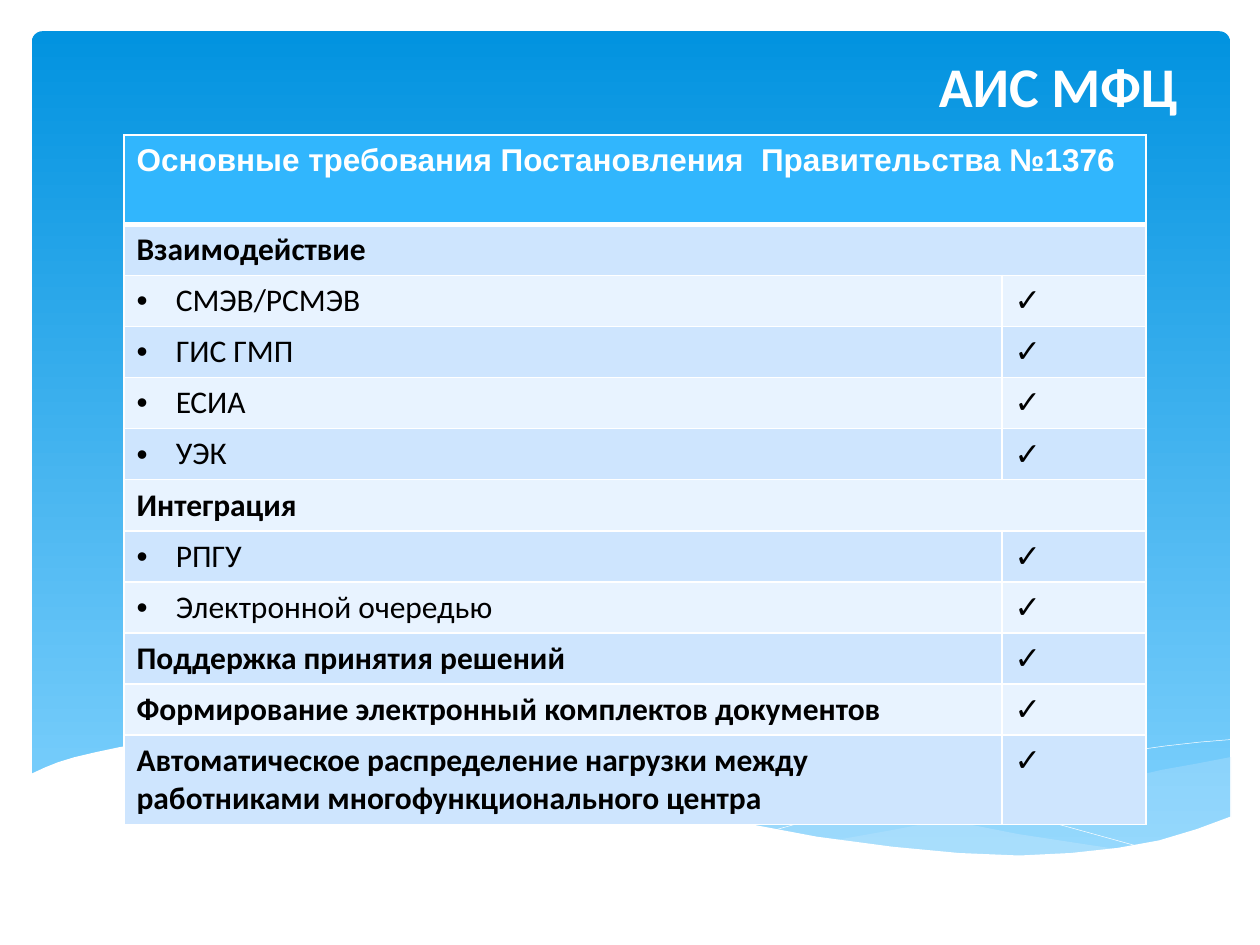
from dataclasses import dataclass

from lxml.etree import SubElement
from pptx import Presentation
from pptx.dml.color import RGBColor
from pptx.enum.shapes import MSO_SHAPE
from pptx.enum.text import PP_ALIGN
from pptx.oxml.ns import qn
from pptx.util import Cm, Pt


@dataclass(frozen=True)
class Theme:
    white: str = "FFFFFF"
    black: str = "000000"
    sky_top: str = "0293E0"
    sky_bottom: str = "83D3FE"
    wave: str = "C6E7FC"
    header: str = "31B6FD"
    bands: tuple = ("CEE5FE", "E8F3FF")
    body_font: str = "Calibri"
    header_font: str = "Arial"
    title_size: int = 32
    table_size: int = 18


THEME = Theme()
HUNDREDTH_INCH = Cm(0.0254)
DOT = "•"
CHECK = "✓"
HEADING = "Основные требования Постановления  Правительства №1376"
REQUIREMENTS = [
    ("Взаимодействие", "section"),
    ("СМЭВ/РСМЭВ", "item"),
    ("ГИС ГМП", "item"),
    ("ЕСИА", "item"),
    ("УЭК", "item"),
    ("Интеграция", "section"),
    ("РПГУ", "item"),
    ("Электронной очередью", "item"),
    ("Поддержка принятия решений", "feature"),
    ("Формирование электронный комплектов документов", "feature"),
    ("Автоматическое распределение нагрузки между работниками "
     "многофункционального центра", "feature"),
]

RIGHT_WAVE = [
    (976, 601), (950, 606), (922, 611), (892, 618), (862, 625), (806, 639),
    (754, 650), (707, 659), (662, 667), (692, 671), (719, 674), (746, 677),
    (770, 679), (804, 680), (836, 679), (864, 677), (890, 674), (914, 669),
    (937, 663), (951, 659), (977, 649), (977, 601),
]
MIDDLE_WAVE = [
    (894, 675), (867, 671), (808, 662), (742, 649), (669, 633), (630, 624),
    (584, 613), (542, 604), (502, 598), (465, 593), (420, 589), (380, 587),
    (345, 588), (314, 590), (287, 593), (323, 598), (363, 604), (405, 613),
    (450, 624), (530, 642), (602, 657), (666, 668), (723, 676), (774, 679),
    (819, 680), (859, 679), (894, 675),
]
FALLING_LINE = [
    (310, 597), (336, 593), (363, 590), (402, 589), (451, 589), (489, 592),
    (533, 596), (582, 602), (637, 610), (696, 621), (761, 635), (832, 652),
    (908, 673),
]
RISING_LINE = [
    (614, 659), (653, 648), (696, 637), (749, 625), (807, 612), (867, 600),
    (897, 596), (925, 592), (952, 589), (976, 587),
]
WHITE_WAVE = [
    (977, 648), (950, 658), (920, 667), (887, 673), (850, 677), (809, 679),
    (761, 677), (708, 672), (648, 664), (579, 651), (529, 641), (475, 629),
    (447, 622), (391, 609), (340, 599), (292, 592), (250, 588), (211, 586),
    (177, 586), (146, 587), (119, 589), (95, 593), (76, 597), (59, 601),
    (46, 605), (36, 609), (23, 615), (23, 731), (977, 731),
]


def color(value):
    return RGBColor.from_string(value)


def add_solid_fill(parent, value):
    fill = SubElement(parent, qn("a:solidFill"))
    SubElement(fill, qn("a:srgbClr"), val=value)


def add_background(slide):
    shape = slide.shapes.add_shape(
        MSO_SHAPE.ROUNDED_RECTANGLE, Cm(0.64), Cm(0.63), Cm(24.16), Cm(16.76))
    shape.adjustments[0] = 0.013
    shape.shadow.inherit = False
    shape.line.fill.background()
    shape.fill.gradient()
    shape.fill.gradient_angle = 270
    for stop, value in zip(shape.fill.gradient_stops,
                           (THEME.sky_top, THEME.sky_bottom)):
        stop.color.rgb = color(value)


def draw_outline(slide, points, close):
    builder = slide.shapes.build_freeform(*points[0], scale=HUNDREDTH_INCH)
    builder.add_line_segments(points[1:], close=close)
    shape = builder.convert_to_shape()
    shape.shadow.inherit = False
    return shape


def add_wave(slide, points, fill, opacity=100):
    shape = draw_outline(slide, points, True)
    shape.line.fill.background()
    shape.fill.solid()
    shape.fill.fore_color.rgb = color(fill)
    if opacity < 100:
        for node in shape.fill._xPr.iter(qn("a:srgbClr")):
            SubElement(node, qn("a:alpha"), val=str(opacity * 1000))


def add_curve(slide, points):
    shape = draw_outline(slide, points, False)
    shape.fill.background()
    shape.line.color.rgb = color(THEME.white)
    shape.line.width = Cm(0.01)


def style_font(font, size, value, bold, name=THEME.body_font):
    font.name = name
    font.size = Pt(size)
    font.bold = bold
    font.color.rgb = color(value)


def add_bullet(paragraph, symbol):
    properties = paragraph._p.get_or_add_pPr()
    indent = Cm(0.79)
    properties.set("marL", str(indent))
    properties.set("indent", str(-indent))
    SubElement(properties, qn("a:buFont"), typeface=THEME.header_font)
    SubElement(properties, qn("a:buChar"), char=symbol)


def style_cell(cell, fill, thick_side=None):
    properties = cell._tc.get_or_add_tcPr()
    for side in ("lnL", "lnR", "lnT", "lnB"):
        width = Pt(3 if side == thick_side else 1)
        border = SubElement(properties, qn(f"a:{side}"), w=str(width))
        add_solid_fill(border, THEME.white)
    cell.fill.solid()
    cell.fill.fore_color.rgb = color(fill)


def write_cell(cell, text, value, bold, name=THEME.body_font, bullet=None):
    paragraph = cell.text_frame.paragraphs[0]
    paragraph.text = text
    if bullet:
        add_bullet(paragraph, bullet)
    style_font(paragraph.font, THEME.table_size, value, bold, name)


def add_requirements_table(slide):
    table = slide.shapes.add_table(
        len(REQUIREMENTS) + 1, 2, Cm(2.5), Cm(2.72), Cm(20.6), Cm(13.9)).table
    for column, width in zip(table.columns, (17.7, 2.9)):
        column.width = Cm(width)
    for row in table.rows:
        row.height = Cm(1.03)
    table.rows[0].height = table.rows[len(REQUIREMENTS)].height = Cm(1.8)

    for cell in table.rows[0].cells:
        style_cell(cell, THEME.header, "lnB")
    heading = table.cell(0, 0)
    heading.merge(table.cell(0, 1))
    heading.margin_top = Cm(0.17)
    write_cell(heading, HEADING, THEME.white, True, THEME.header_font)

    for index, (text, kind) in enumerate(REQUIREMENTS):
        label, mark = table.rows[index + 1].cells
        for cell in (label, mark):
            style_cell(cell, THEME.bands[index % 2])
        write_cell(label, text, THEME.black, kind != "item",
                   bullet=DOT if kind == "item" else None)
        if kind == "section":
            label.merge(mark)
        else:
            write_cell(mark, " ", THEME.black, False, bullet=CHECK)


def add_title(slide, text):
    box = slide.shapes.add_textbox(Cm(0.5), Cm(0.91), Cm(23.5), Cm(1.62))
    box.text_frame.word_wrap = True
    paragraph = box.text_frame.paragraphs[0]
    paragraph.text = text
    paragraph.alignment = PP_ALIGN.RIGHT
    style_font(paragraph.font, THEME.title_size, THEME.white, True)


def main():
    presentation = Presentation()
    presentation.slide_width = Cm(25.4)
    presentation.slide_height = Cm(19.05)
    slide = presentation.slides.add_slide(presentation.slide_layouts[6])
    add_background(slide)
    add_wave(slide, RIGHT_WAVE, THEME.wave, 29)
    add_wave(slide, MIDDLE_WAVE, THEME.wave, 40)
    add_curve(slide, FALLING_LINE)
    add_curve(slide, RISING_LINE)
    add_wave(slide, WHITE_WAVE, THEME.white)
    add_requirements_table(slide)
    add_title(slide, "АИС МФЦ")
    presentation.save("out.pptx")


if __name__ == "__main__":
    main()
